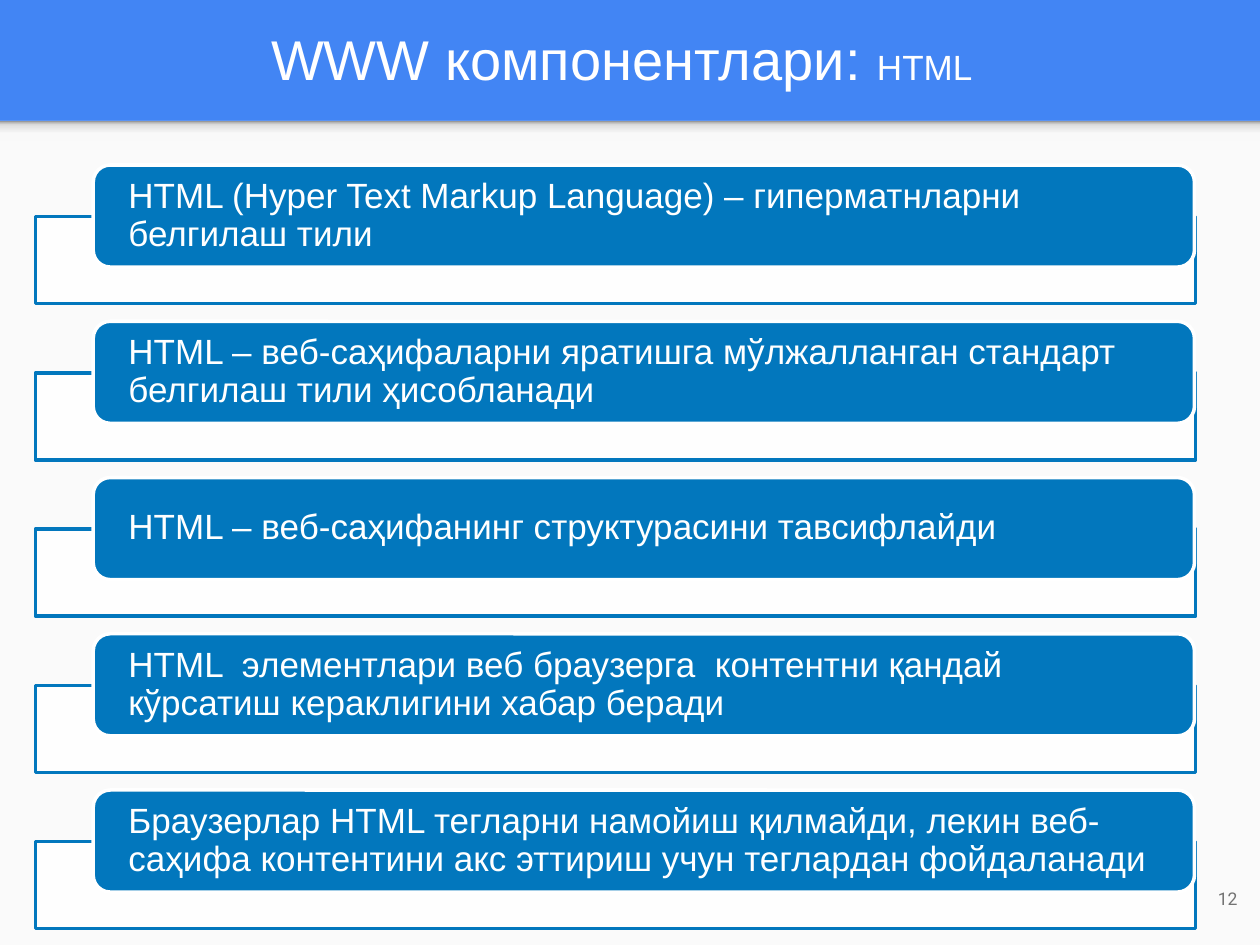
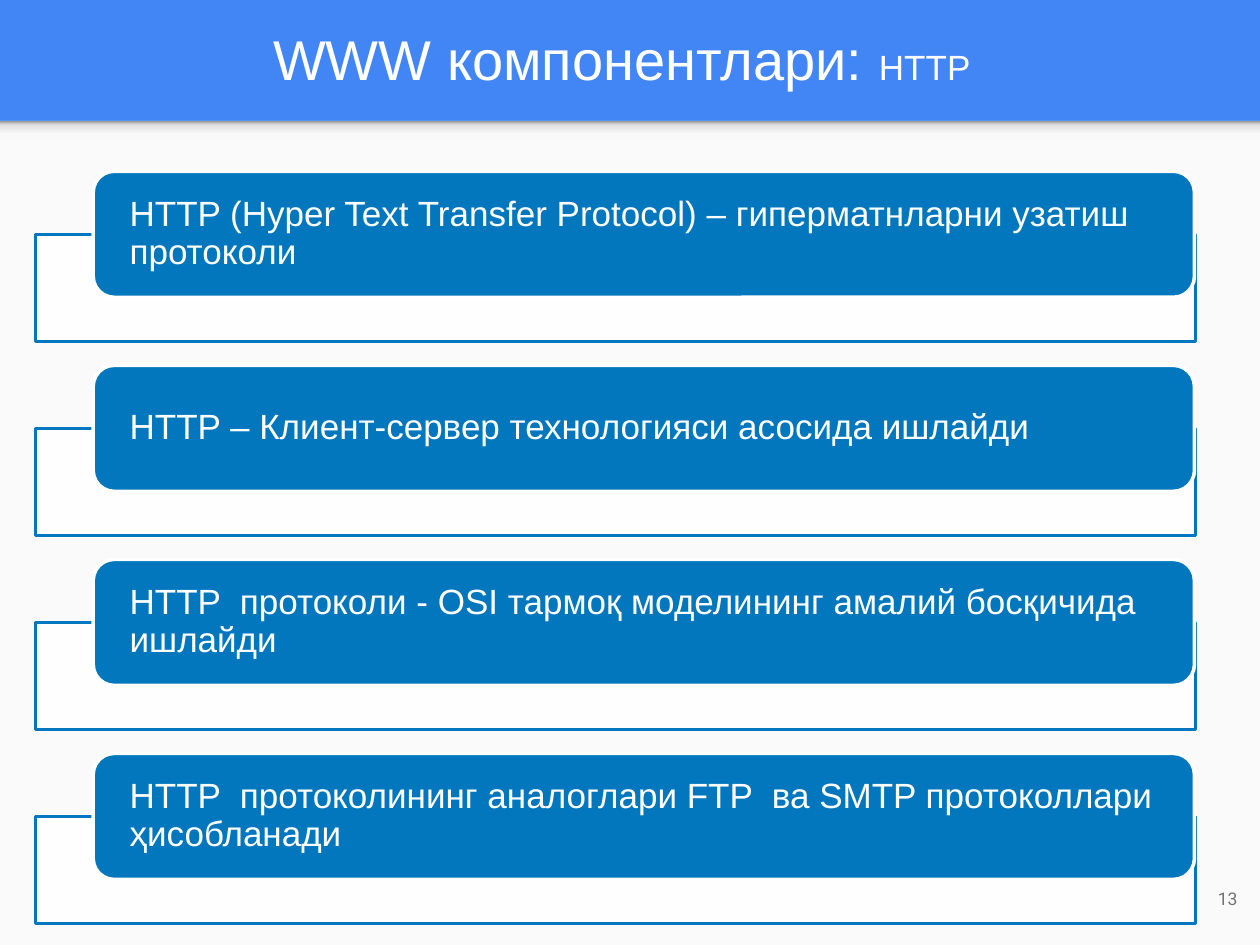
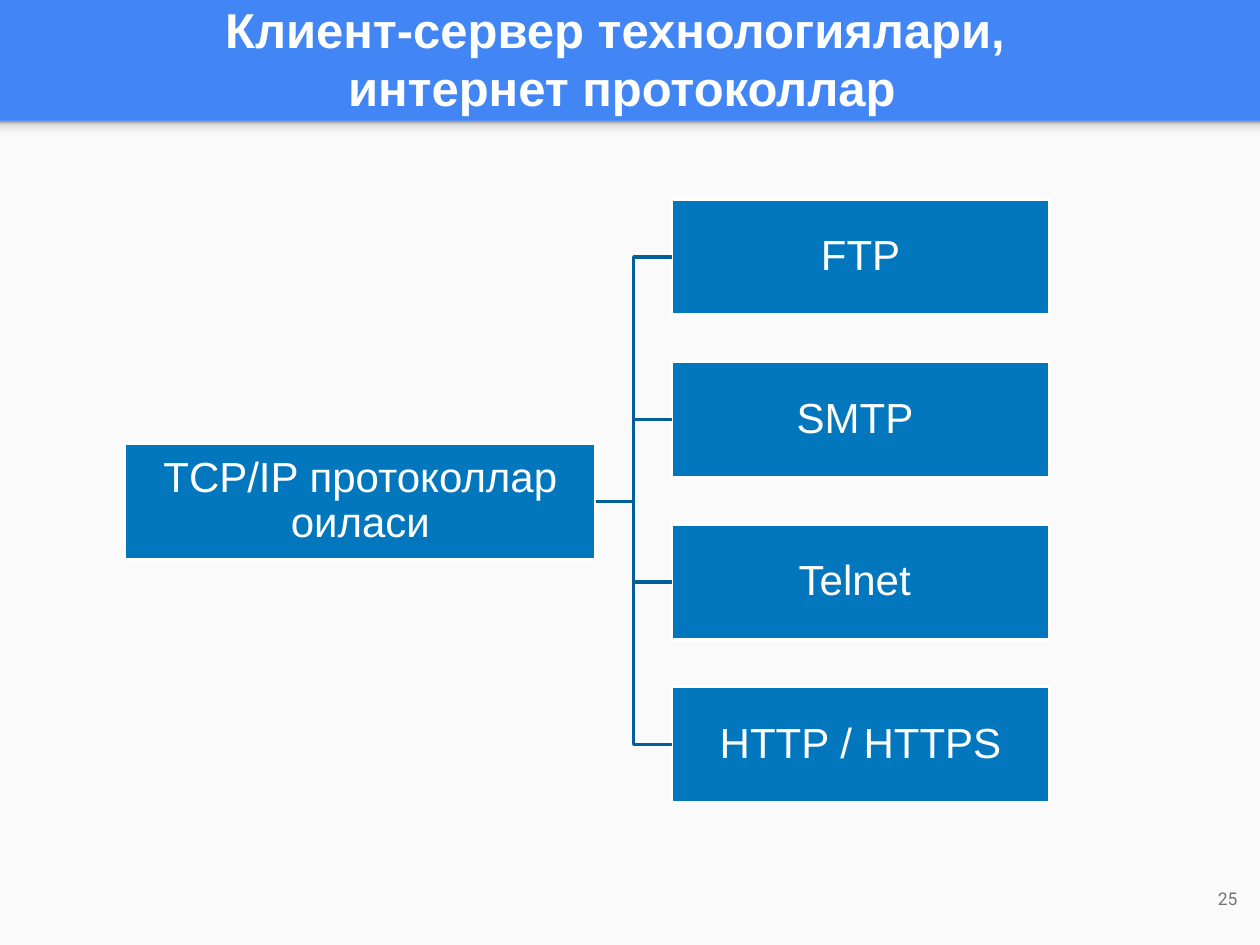
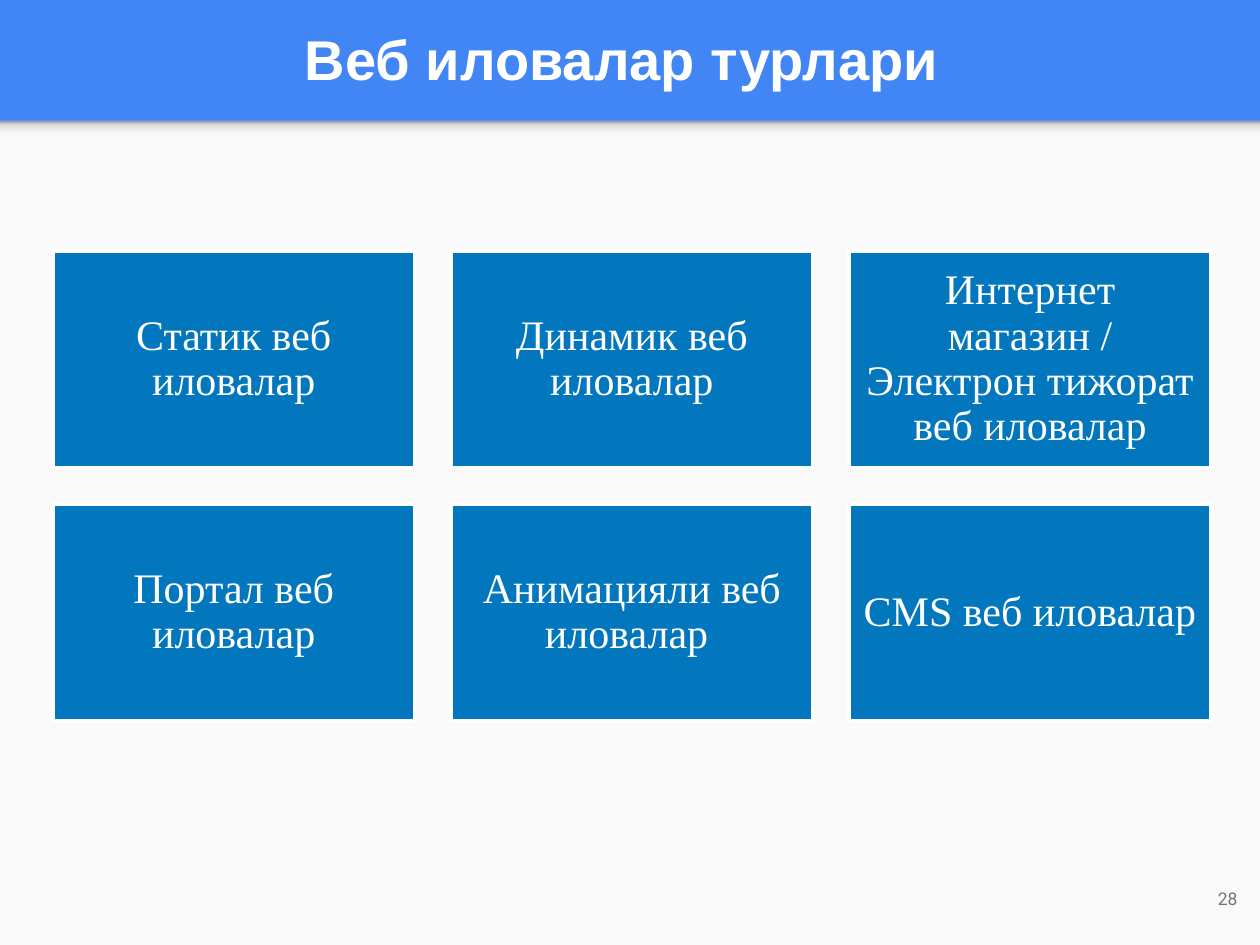
"""Build four slides on web components, internet protocols and web applications."""
import lxml.etree
import pptx
import pptx.dml.color
import pptx.enum.dml
import pptx.enum.shapes
import pptx.enum.text
import pptx.oxml.ns
import pptx.util

Inches = pptx.util.Inches
Pt = pptx.util.Pt
KIND = pptx.enum.shapes.MSO_SHAPE
LINK = pptx.enum.shapes.MSO_CONNECTOR
ALIGN = pptx.enum.text.PP_ALIGN
MIDDLE = pptx.enum.text.MSO_ANCHOR.MIDDLE
qn = pptx.oxml.ns.qn
sub = lxml.etree.SubElement

COLORS = {
    "band": "4285F4",
    "page": "FAFAFA",
    "card": "0277BD",
    "link": "025F97",
    "white": "FFFFFF",
    "number": "737373",
}
RGB = {name: pptx.dml.color.RGBColor.from_string(code) for name, code in COLORS.items()}
SHADE = [(0, "F9F9F9"), (36, "F9F9F9"), (80, "DEDEDE"), (100, "999999")]


def add_box(slide, kind, place, fill, line=None):
    box = slide.shapes.add_shape(kind, *[Inches(n) for n in place])
    box.shadow.inherit = False
    box.fill.solid()
    box.fill.fore_color.rgb = RGB[fill]
    if line:
        box.line.color.rgb = RGB[line]
        box.line.width = Pt(2)
    else:
        box.line.fill.background()
    return box


def set_text(shape, text, size, font="Arial", color="white", align=ALIGN.CENTER,
             pads=(0.1, 0.1), space=None, bold=False):
    frame = shape.text_frame
    frame.word_wrap = True
    frame.auto_size = pptx.enum.text.MSO_AUTO_SIZE.NONE
    frame.vertical_anchor = MIDDLE
    frame.margin_left = frame.margin_right = Inches(pads[0])
    frame.margin_top = frame.margin_bottom = Inches(pads[1])
    frame.text = text
    para = frame.paragraphs[0]
    para.alignment = align
    if space:
        para.line_spacing = space
    for run in para.runs:
        run.font.name = font
        run.font.size = Pt(size)
        run.font.bold = bold
        run.font.color.rgb = RGB[color]
    return para


deck = pptx.Presentation()
deck.slide_width = Inches(10)
deck.slide_height = Inches(7.5)
back = deck.slide_master.background.fill
back.solid()
back.fore_color.rgb = RGB["band"]

heads = [
    ("WWW компонентлари: ", "HTML", 32, False, "12"),
    ("WWW компонентлари: ", "HTTP", 32, False, "13"),
    ("Клиент-сервер технологиялари, \vинтернет протоколлар", "", 28, True, "25"),
    ("Веб иловалар турлари", "", 32, True, "28"),
]
slides = []
for head, tail, size, bold, number in heads:
    slide = deck.slides.add_slide(deck.slide_layouts[5])
    slides.append(slide)
    add_box(slide, KIND.RECTANGLE, (0, 0.96, 10, 6.54), "page")

    shade = add_box(slide, KIND.RECTANGLE, (0, 0.96, 10, 0.16), "page")
    shade.fill.gradient()
    shade.fill.gradient_angle = 90
    stops = shade.element.spPr.find(qn("a:gradFill")).find(qn("a:gsLst"))
    for stop in list(stops):
        stops.remove(stop)
    for spot, code in SHADE:
        stop = sub(stops, qn("a:gs"), pos=str(spot * 1000))
        sub(stop, qn("a:srgbClr"), val=code)

    title = slide.shapes.title
    title.left, title.top = Inches(0.11), Inches(0.02)
    title.width, title.height = Inches(9.65), Inches(0.88)
    para = set_text(title, head, size, bold=bold)
    if tail:
        run = para.add_run()
        run.text = tail
        run.font.name = "Arial"
        run.font.size = Pt(20)
        run.font.bold = bold
        run.font.color.rgb = RGB["white"]

    page = slide.shapes.add_textbox(Inches(9.32), Inches(6.85), Inches(0.6), Inches(0.57))
    set_text(page, number, 10, "Roboto", "number", ALIGN.RIGHT)

lists = [
    (slides[0], 1.31, 1.24, 0.81, 0.41, 0.69, [
        "HTML (Hyper Text Markup Language) – гиперматнларни белгилаш тили",
        "HTML – веб-саҳифаларни яратишга мўлжалланган стандарт белгилаш тили ҳисобланади",
        "HTML – веб-саҳифанинг структурасини тавсифлайди",
        "HTML  элементлари веб браузерга  контентни қандай кўрсатиш кераклигини хабар беради",
        "Браузерлар HTML тегларни намойиш қилмайди, лекин веб-саҳифа контентини "
        "акс эттириш учун теглардан фойдаланади",
    ]),
    (slides[1], 1.36, 1.54, 1, 0.5, 0.85, [
        "HTTP (Hyper Text Transfer Protocol) – гиперматнларни узатиш протоколи",
        "HTTP – Клиент-сервер технологияси асосида ишлайди",
        "HTTP  протоколи - OSI тармоқ моделининг амалий босқичида ишлайди",
        "HTTP  протоколининг аналоглари FTP  ва SMTP протоколлари ҳисобланади",
    ]),
]
for slide, top, step, high, drop, deep, items in lists:
    for row, item in enumerate(items):
        y = top + row * step
        frame = add_box(slide, KIND.RECTANGLE, (0.28, y + drop, 9.21, deep), "white", "card")
        tint = frame.element.spPr.find(qn("a:solidFill")).find(qn("a:srgbClr"))
        sub(tint, qn("a:alpha"), val="90000")
        card = add_box(slide, KIND.ROUNDED_RECTANGLE, (0.74, y, 8.74, high), "card", "white")
        set_text(card, item, 20, align=ALIGN.LEFT, pads=(0.24, 0), space=0.9)

slide = slides[2]
root = add_box(slide, KIND.RECTANGLE, (0.99, 3.52, 3.74, 0.92), "card", "white")
set_text(root, "TCP/IP протоколлар оиласи", 24, pads=(0.02, 0.02), space=0.9)
for row, item in enumerate(["FTP", "SMTP ", "Telnet ", "HTTP / HTTPS"]):
    leaf = add_box(slide, KIND.RECTANGLE, (5.33, 1.58 + row * 1.29, 3, 0.92), "card", "white")
    set_text(leaf, item, 24, pads=(0.02, 0.02), space=0.9)
    link = slide.shapes.add_connector(LINK.ELBOW, 0, 0, 0, 0)
    link.begin_connect(root, 3)
    link.end_connect(leaf, 1)
    link.line.color.rgb = RGB["link"]
    link.line.width = Pt(2)
    sub(link.element.spPr, qn("a:effectLst"))

kinds = [
    "Статик веб иловалар",
    "Динамик веб иловалар",
    "Интернет магазин / Электрон тижорат веб иловалар",
    "Портал веб иловалар",
    "Анимацияли веб иловалар ",
    "CMS веб иловалар",
]
for spot, item in enumerate(kinds):
    row, col = divmod(spot, 3)
    place = (0.42 + col * 3.16, 1.99 + row * 2.01, 2.87, 1.72)
    tile = add_box(slides[3], KIND.RECTANGLE, place, "card", "white")
    set_text(tile, item, 24, "Times New Roman", space=0.9)

deck.save("out.pptx")
